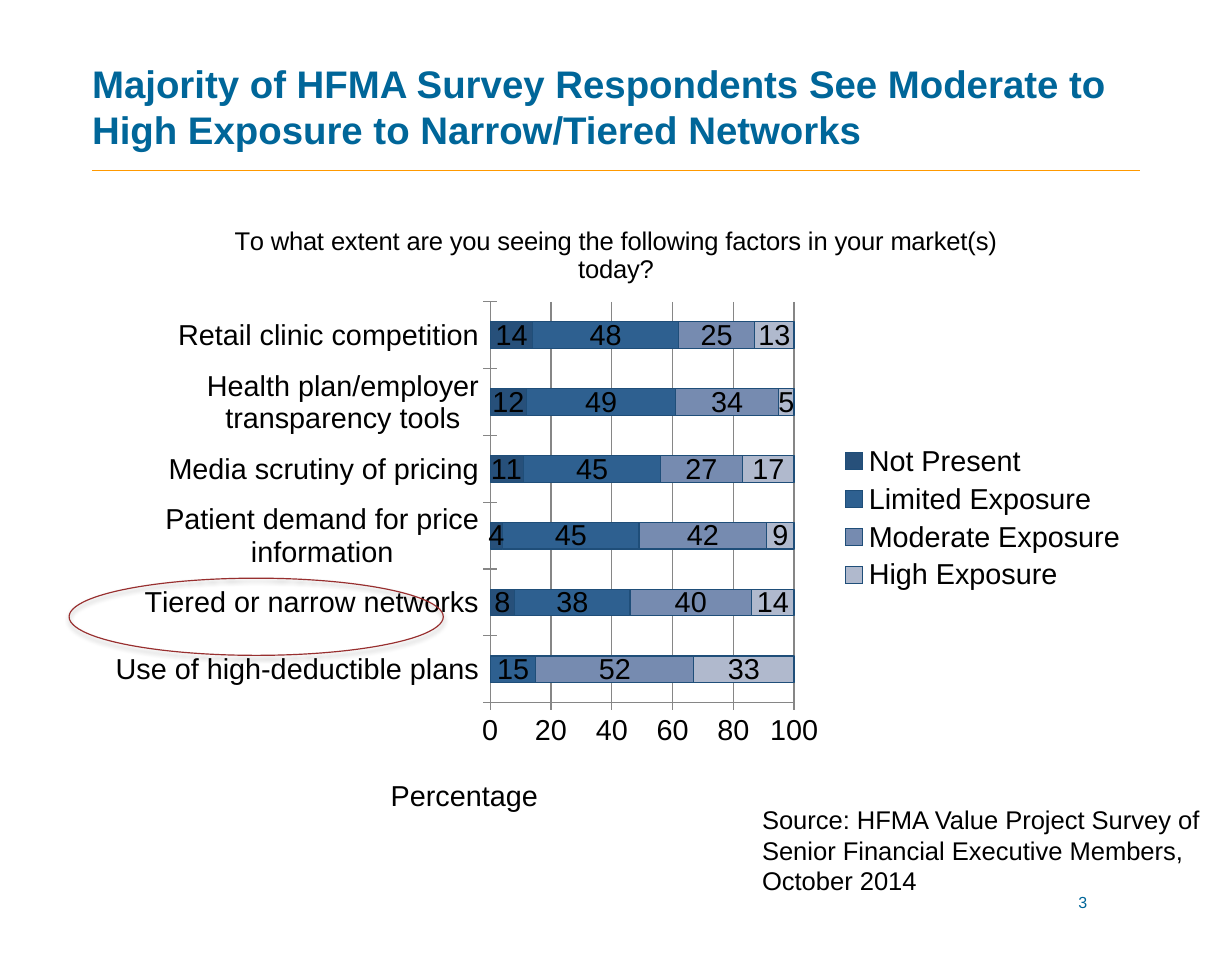
from lxml import etree
from pptx import Presentation
from pptx.chart import data
from pptx.dml.color import RGBColor
from pptx.enum import chart as ec, shapes, text
from pptx.oxml import parse_xml
from pptx.oxml.ns import nsdecls, qn
from pptx.util import Inches, Pt

BLUE = RGBColor(0x00, 0x66, 0x99)
GOLD = RGBColor(0xFF, 0x99, 0x00)
RED = RGBColor(0x98, 0x2F, 0x2F)
BLACK = RGBColor(0, 0, 0)
GREY = RGBColor(0x86, 0x86, 0x86)
EDGE = RGBColor(0x1F, 0x4E, 0x79)
NAVY = RGBColor(0x27, 0x50, 0x7A)
STEEL = RGBColor(0x2E, 0x60, 0x90)
SLATE = RGBColor(0x76, 0x8B, 0xB0)
MIST = RGBColor(0xB0, 0xB9, 0xCD)

CATS = ["Use of high-deductible plans", "Tiered or narrow networks",
        "Patient demand for price information", "Media scrutiny of pricing",
        "Health plan/employer transparency tools", "Retail clinic competition"]
SERIES = [("Not Present", NAVY, (None, 8, 4, 11, 12, 14)),
          ("Limited Exposure", STEEL, (15, 38, 45, 45, 49, 48)),
          ("Moderate Exposure", SLATE, (52, 40, 42, 27, 34, 25)),
          ("High Exposure", MIST, (33, 14, 9, 17, 5, 13))]


def style(font, size, color=BLACK, bold=False):
    """Set the format of a font."""
    form = {"name": "Arial", "size": Pt(size), "bold": bold}
    for key, val in form.items():
        setattr(font, key, val)
    font.color.rgb = color


def stroke(line, color, width=0.75):
    """Set the colour and width of a line."""
    line.color.rgb = color
    line.width = Pt(width)


def write(shape, words, size, color=BLACK, align=text.PP_ALIGN.LEFT, bold=False):
    """Put one wrapped paragraph in a shape."""
    shape.text_frame.word_wrap = True
    para = shape.text_frame.paragraphs[0]
    para.text = words
    para.alignment = align
    style(para.font, size, color, bold)


def place(node, index, **spots):
    """Give a chart part a fixed place, as shares of the chart."""
    for old in node.findall(qn("c:layout")):
        node.remove(old)
    layout = parse_xml(f"<c:layout {nsdecls('c')}><c:manualLayout/></c:layout>")
    for key, val in spots.items():
        etree.SubElement(layout[0], qn("c:" + key)).set("val", str(val))
    node.insert(index, layout)


def head(slide, left, top, width, height):
    """Draw the title and the rule below it."""
    title = slide.shapes.title
    box = {"left": left, "top": top, "width": width, "height": height}
    for key, val in box.items():
        setattr(title, key, Inches(val))
    form = {"margin_left": 0, "margin_right": 0, "margin_top": 0,
            "margin_bottom": Inches(0.16), "vertical_anchor": text.MSO_ANCHOR.BOTTOM,
            "auto_size": text.MSO_AUTO_SIZE.NONE}
    for key, val in form.items():
        setattr(title.text_frame, key, val)
    write(title, "Majority of HFMA Survey Respondents See Moderate to "
          "High Exposure to Narrow/Tiered Networks", 24, BLUE, bold=True)
    base = Inches(top + height)
    rule = slide.shapes.add_connector(shapes.MSO_CONNECTOR.STRAIGHT, Inches(left), base,
                                      Inches(left + width), base)
    stroke(rule.line, GOLD, 1)
    etree.SubElement(rule.line._get_or_add_ln().getparent(), qn("a:effectLst"))


def axes(chart):
    """Format both axes and the axis title."""
    for axis in (chart.category_axis, chart.value_axis):
        axis.major_tick_mark = ec.XL_TICK_MARK.CROSS
        axis.minor_tick_mark = ec.XL_TICK_MARK.NONE
        stroke(axis.format.line, GREY)
        style(axis.tick_labels.font, 18)
    axis = chart.value_axis
    form = {"minimum_scale": 0, "maximum_scale": 100, "major_unit": 20,
            "has_major_gridlines": True}
    for key, val in form.items():
        setattr(axis, key, val)
    stroke(axis.major_gridlines.format.line, GREY)
    name = axis.axis_title
    name.text_frame.text = "Percentage"
    style(name.text_frame.paragraphs[0].runs[0].font, 18)
    place(name._element, 1, xMode="edge", yMode="edge", x=0.28, y=0.91)


def graph(slide, left, top, width, height):
    """Draw the stacked bars of the survey answers."""
    table = data.CategoryChartData(number_format="0")
    table.categories = CATS
    for name, _, vals in SERIES:
        table.add_series(name, vals)
    chart = slide.shapes.add_chart(ec.XL_CHART_TYPE.BAR_STACKED, Inches(left), Inches(top),
                                   Inches(width), Inches(height), table).chart
    style(chart.font, 18)
    chart.has_title = True
    chart.chart_title.text_frame.text = ("To what extent are you seeing the following "
                                         "factors in your market(s) today?")
    style(chart.chart_title.text_frame.paragraphs[0].runs[0].font, 16)
    plot = chart.plots[0]
    plot.gap_width, plot.overlap, plot.vary_by_categories = 150, 100, False
    for part, (_, color, _) in zip(plot.series, SERIES):
        part.format.fill.solid()
        part.format.fill.fore_color.rgb = color
        stroke(part.format.line, EDGE)
        part.data_labels.show_value = True
        style(part.data_labels.font, 18)
    axes(chart)
    chart.has_legend = True
    chart.legend.position = ec.XL_LEGEND_POSITION.RIGHT
    chart.legend.include_in_layout = False
    style(chart.legend.font, 18)
    place(chart.legend._element, 1, xMode="edge", yMode="edge", x=0.71, y=0.38, w=0.28, h=0.25)
    area = chart._chartSpace.find(".//" + qn("c:plotArea"))
    place(area, 0, layoutTarget="inner", xMode="edge", yMode="edge",
          x=0.38, y=0.16, w=0.29, h=0.64)


def ring(slide, left, top, width, height):
    """Draw the ellipse that marks one factor."""
    oval = slide.shapes.add_shape(shapes.MSO_SHAPE.OVAL, Inches(left), Inches(top),
                                  Inches(width), Inches(height))
    oval.fill.background()
    stroke(oval.line, RED)
    oval.shadow.inherit = False
    glow = oval._element.spPr.find(qn("a:effectLst"))
    glow.append(parse_xml(
        f'<a:outerShdw {nsdecls("a")} blurRad="{Pt(3.1)}" dist="{Pt(1.8)}" dir="5400000" '
        'rotWithShape="0"><a:srgbClr val="000000"><a:alpha val="35000"/></a:srgbClr>'
        '</a:outerShdw>'))


def note(slide, left, top, width, height, words, size, **form):
    """Add a text box."""
    box = slide.shapes.add_textbox(Inches(left), Inches(top), Inches(width), Inches(height))
    write(box, words, size, **form)


def main():
    """Build and save the slide."""
    deck = Presentation()
    deck.slide_width, deck.slide_height = Inches(10.7), Inches(8.3)
    slide = deck.slides.add_slide(deck.slide_layouts[5])
    head(slide, 0.8, 0, 9.1, 1.48)
    graph(slide, 0.8, 1.75, 9.1, 5.44)
    note(slide, 8.29, 7.7, 2.23, 0.44, "3", 10, color=BLUE, align=text.PP_ALIGN.CENTER)
    note(slide, 6.52, 6.93, 4.18, 0.91, "Source: HFMA Value Project Survey of Senior "
         "Financial Executive Members, October 2014", 16)
    ring(slide, 0.6, 5.02, 3.25, 0.67)
    deck.save("out.pptx")


if __name__ == "__main__":
    main()
